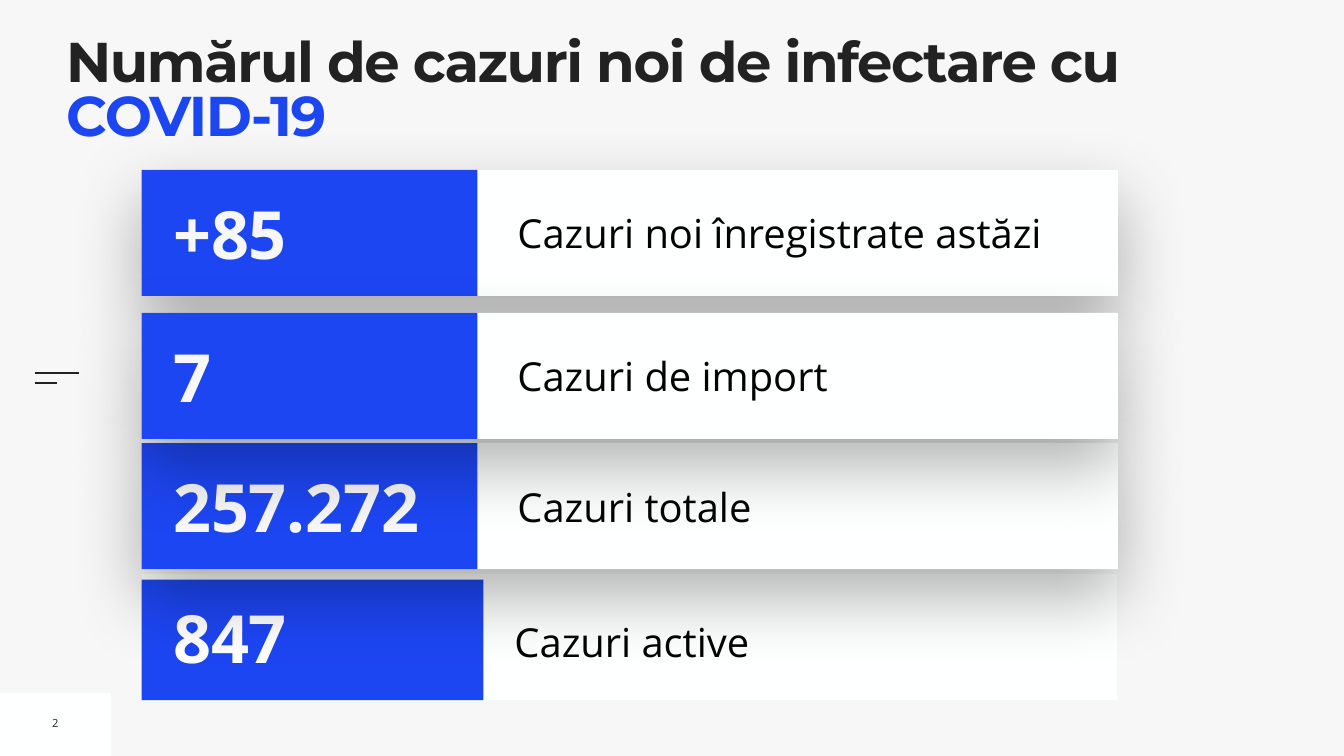
from dataclasses import dataclass

from lxml.etree import SubElement as Sub
from pptx import Presentation
from pptx.dml.color import RGBColor as Rgb
from pptx.enum.shapes import MSO_CONNECTOR as Link, MSO_SHAPE as Form
from pptx.enum.text import MSO_ANCHOR as Anchor, PP_ALIGN as Align
from pptx.oxml.ns import qn
from pptx.util import Cm, Pt


@dataclass(frozen=True)
class Theme:
    back: str = "F7F7F7"
    panel: str = "FEFFFF"
    blue: str = "1D46F3"
    dark: str = "222222"
    black: str = "000000"
    white: str = "FFFFFF"
    head: str = "Montserrat"
    body: str = "Open Sans"
    title: int = 80
    count: int = 95
    label: int = 57
    page: int = 16


def write(para, text, font, size, color, bold=False, track=0):
    """Add one formatted run; track is letter spacing in points."""
    run = para.add_run()
    run.text = text
    face = run.font
    face.name, face.size, face.bold = font, Pt(size), bold
    face.color.rgb = Rgb.from_string(color)
    if track:
        face._element.set("spc", str(track * 100))


class Board:
    def __init__(self, slide, theme):
        self.slide, self.theme = slide, theme
        fill = slide.background.fill
        fill.solid()
        fill.fore_color.rgb = Rgb.from_string(theme.back)

    def rect(self, box, color, shadow=False, group=None):
        home = (group or self.slide).shapes
        shape = home.add_shape(Form.RECTANGLE, *map(Cm, box))
        shape.shadow.inherit = False
        shape.fill.solid()
        shape.fill.fore_color.rgb = Rgb.from_string(color)
        shape.line.fill.background()
        if shadow:
            self.shade(shape)

    def shade(self, shape):
        """Give the shape a soft shadow that falls downwards."""
        effects = shape._element.spPr.find(qn("a:effectLst"))
        outer = Sub(effects, qn("a:outerShdw"), blurRad=str(Pt(100)),
                    dist=str(Pt(40)), dir="5400000", rotWithShape="0")
        tint = Sub(outer, qn("a:srgbClr"), val=self.theme.black)
        Sub(tint, qn("a:alpha"), val="30000")

    def line(self, left, top, width):
        link = self.slide.shapes.add_connector(
            Link.STRAIGHT, Cm(left), Cm(top), Cm(left + width), Cm(top))
        link.line.color.rgb = Rgb.from_string(self.theme.dark)
        link.line.width = Pt(3)
        Sub(link._element.spPr, qn("a:effectLst"))

    def text(self, box, *runs, group=None, inset=0.25, anchor=Anchor.MIDDLE,
             align=Align.LEFT, wrap=True, lead=None, before=None):
        """Add a one-paragraph text box; each run is a dict for write."""
        home = (group or self.slide).shapes
        frame = home.add_textbox(*map(Cm, box)).text_frame
        frame.word_wrap, frame.vertical_anchor = wrap, anchor
        frame.margin_left = frame.margin_right = Cm(inset)
        frame.margin_top = frame.margin_bottom = Cm(inset)
        para = frame.paragraphs[0]
        para.alignment, para.line_spacing = align, lead
        if before:
            para.space_before = Pt(before)
        for run in runs:
            write(para, **run)

    def row(self, top, count, label, shadow=True, height=6.35, width=49.2,
            blue=(0, 16.92), color=None, tag=(25.83, 1.7, 29.87, 2.95), **form):
        """Add a panel; blue is its drop and width, tag is left, drop and size."""
        look, left = self.theme, 7.14
        group = self.slide.shapes.add_group_shape()
        drop, wide = blue
        self.rect((left, top, width, height), look.panel, shadow, group)
        self.rect((left, top + drop, wide, height - drop), look.blue, group=group)
        x, down, w, h = tag
        self.text((x, top + down, w, h),
                  dict(text=label, font=look.body, size=look.label,
                       color=look.black), group=group, **form)
        tall = 4.57
        self.text((8.48, top + (height - tall) / 2, 15.32, tall),
                  dict(text=count, font=look.body, size=look.count,
                       color=color or look.back, bold=True), group=group)


def main():
    deck = Presentation()
    deck.slide_width, deck.slide_height = Cm(67.74), Cm(38.1)
    look = Theme()
    board = Board(deck.slides.add_slide(deck.slide_layouts[6]), look)

    board.rect((0, 34.95, 5.59, 3.15), look.panel)
    for top, width in ((18.82, 2.24), (19.28, 1.11)):
        board.line(1.75, top, width)
    board.text((2.36, 35.79, 0.86, 1.3),
               dict(text="2", font=look.body, size=look.page, color=look.dark),
               align=Align.CENTER, wrap=False)

    head = dict(font=look.head, size=look.title, bold=True, track=-2)
    board.text((3.33, 1.98, 60.81, 4.01),
               dict(text="Numărul de cazuri noi de infectare cu ",
                    color=look.dark, **head),
               dict(text="COVID-19", color=look.blue, **head),
               inset=0, anchor=Anchor.TOP, lead=0.8)

    # Later rows cast their shadows over earlier ones.
    board.row(28.93, "847", "Cazuri active", shadow=False, width=49.15,
              blue=(0.28, 17.22), color=look.white,
              tag=(25.93, 1.47, 29.41, 3.18), inset=0, lead=1.3, before=20)
    for top, count, label in (
            (8.56, "+85", "Cazuri noi înregistrate astăzi"),
            (22.33, "257.272", "Cazuri totale"),
            (15.77, "7", "Cazuri de import")):
        board.row(top, count, label)

    deck.save("out.pptx")


if __name__ == "__main__":
    main()
